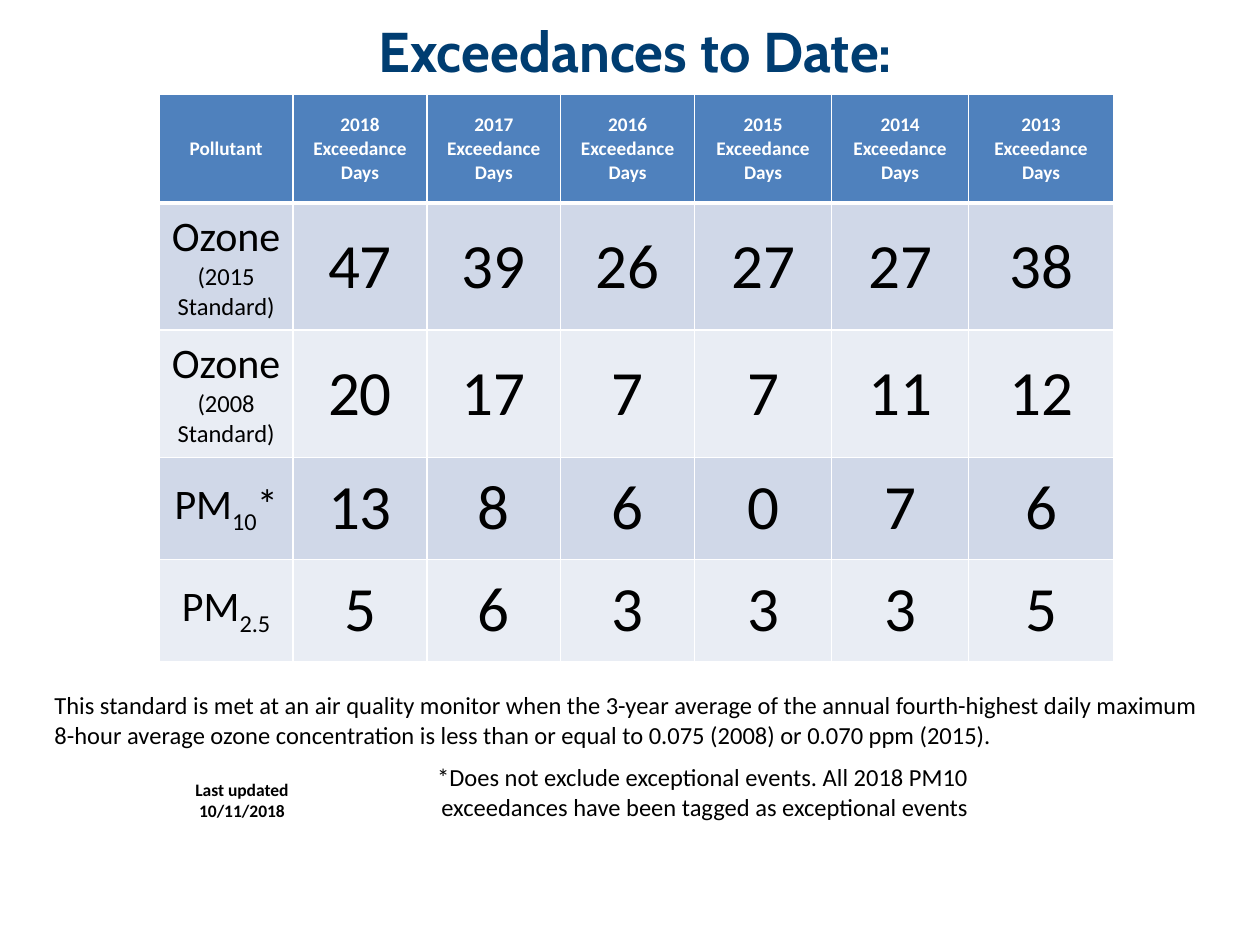
"""Build the slide that lists pollutant exceedance days by year."""
from lxml.etree import SubElement
from pptx import Presentation
from pptx.dml.color import RGBColor
from pptx.enum.text import MSO_ANCHOR, PP_ALIGN
from pptx.oxml.ns import qn
from pptx.util import Pt

COLORS = {"title": "003D71", "header": "4F81BD", "dark": "D0D8E8",
          "light": "E9EDF4", "white": "FFFFFF", "black": "000000"}
COLUMNS = [76.5] * 4 + [78.3] * 2 + [82.8]
ROWS = [62, 72.7, 72.7, 58.3, 58.3]
YEARS = range(2018, 2012, -1)
HEADER = ["Pollutant"] + [f"{year} Exceedance Days" for year in YEARS]
POLLUTANTS = [
    ([("Ozone ", 24, 0), ("(2015 Standard)", 14, 0)], [47, 39, 26, 27, 27, 38]),
    ([("Ozone ", 24, 0), ("(2008 Standard)", 14, 0)], [20, 17, 7, 7, 11, 12]),
    ([("PM", 24, 0), ("10", 24, -25), ("*", 24, 0)], [13, 8, 6, 0, 7, 6]),
    ([("PM", 24, 0), ("2.5", 24, -25)], [5, 6, 3, 3, 3, 5]),
]


class SlideBuilder:
    def __init__(self, page):
        self.page = page
        self.font = "Calibri"

    def color(self, name):
        return RGBColor.from_string(COLORS[name])

    def style(self, paragraph, size, color="black", bold=False,
              align=PP_ALIGN.CENTER, font=None):
        paragraph.alignment = align
        paragraph.font.name = font or self.font
        paragraph.font.size = Pt(size)
        paragraph.font.bold = bold
        paragraph.font.color.rgb = self.color(color)

    def title(self, text, left, top, width, height):
        box = self.page.shapes.title
        box.left, box.top, box.width, box.height = map(Pt, (left, top, width, height))
        frame = box.text_frame
        frame.text = text
        frame.vertical_anchor = MSO_ANCHOR.TOP
        self.style(frame.paragraphs[0], 32, "title", True, font="Cabin")

    def note(self, text, left, top, width, height, size=14, bold=False,
             align=PP_ALIGN.LEFT, right_inset=7.2):
        box = self.page.shapes.add_textbox(*map(Pt, (left, top, width, height)))
        frame = box.text_frame
        frame.word_wrap = True
        frame.margin_right = Pt(right_inset)
        frame.text = text
        self.style(frame.paragraphs[0], size, bold=bold, align=align)

    def borders(self, cell, top, bottom):
        properties = cell._tc.get_or_add_tcPr()
        for side, width in (("L", 1), ("R", 1), ("T", top), ("B", bottom)):
            line = SubElement(properties, qn(f"a:ln{side}"), w=str(Pt(width)))
            fill = SubElement(line, qn("a:solidFill"))
            SubElement(fill, qn("a:srgbClr"), val=COLORS["white"])

    def cell(self, cell, spans, fill, top=1, bottom=1, color="black", bold=False):
        self.borders(cell, top, bottom)
        cell.fill.solid()
        cell.fill.fore_color.rgb = self.color(fill)
        cell.vertical_anchor = MSO_ANCHOR.MIDDLE
        cell.margin_left = cell.margin_right = Pt(5.2)
        cell.margin_top = cell.margin_bottom = Pt(3.6)
        paragraph = cell.text_frame.paragraphs[0]
        self.style(paragraph, spans[0][1], color, bold)
        for text, size, baseline in spans:
            span = paragraph.add_run()
            span.text = text
            span.font.size = Pt(size)
            if baseline:
                span.font._element.set("baseline", str(baseline * 1000))

    def table(self, left, top):
        table = self.page.shapes.add_table(
            len(ROWS), len(COLUMNS), Pt(left), Pt(top),
            Pt(sum(COLUMNS)), Pt(sum(ROWS))).table
        for column, width in zip(table.columns, COLUMNS):
            column.width = Pt(width)
        for row, height in zip(table.rows, ROWS):
            row.height = Pt(height)
        for column, text in enumerate(HEADER):
            self.cell(table.cell(0, column), [(text, 11, 0)], "header",
                      bottom=3, color="white", bold=True)
        for row, (name, days) in enumerate(POLLUTANTS, 1):
            fill = "dark" if row % 2 else "light"
            entries = [name] + [[(str(count), 36, 0)] for count in days]
            for column, spans in enumerate(entries):
                self.cell(table.cell(row, column), spans, fill,
                          top=3 if row == 1 else 1)


def main():
    deck = Presentation()
    deck.slide_width, deck.slide_height = Pt(720), Pt(540)
    builder = SlideBuilder(deck.slides.add_slide(deck.slide_layouts[5]))
    builder.title("Exceedances to Date:", 120, 6, 486, 90)
    builder.table(91, 54)
    builder.note("*Does not exclude exceptional events. All 2018 PM10 exceedances "
                 "have been tagged as exceptional events",
                 204, 432, 360, 41, align=PP_ALIGN.RIGHT, right_inset=10.7)
    builder.note("Last updated 10/11/2018", 88.5, 441.5, 99.5, 31.5,
                 size=10, bold=True, align=PP_ALIGN.CENTER)
    builder.note("This standard is met at an air quality monitor when the 3-year "
                 "average of the annual fourth-highest daily maximum 8-hour average "
                 "ozone concentration is less than or equal to 0.075 (2008) or "
                 "0.070 ppm (2015).", 24, 391, 672, 41)
    deck.save("out.pptx")


if __name__ == "__main__":
    main()
